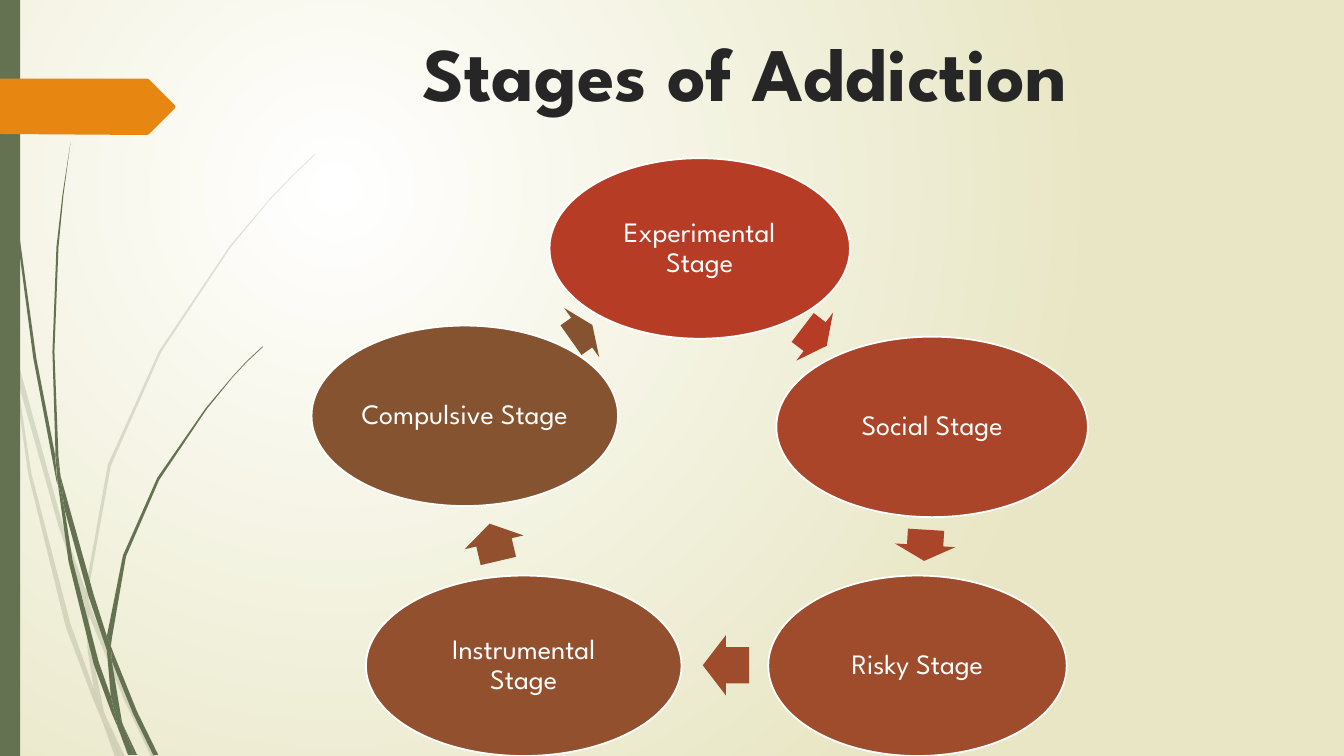
from lxml import etree
from pptx import Presentation
from pptx.dml.color import RGBColor
from pptx.enum.shapes import MSO_SHAPE
from pptx.enum.text import MSO_ANCHOR, PP_ALIGN
from pptx.oxml.ns import qn
from pptx.util import Inches, Pt

OVAL, ARROW, BAR = MSO_SHAPE.OVAL, MSO_SHAPE.RIGHT_ARROW, MSO_SHAPE.RECTANGLE
CENTER, MIDDLE, TOP = PP_ALIGN.CENTER, MSO_ANCHOR.MIDDLE, MSO_ANCHOR.TOP

COLUMNS, ROWS = 1333, 750
CELL = Inches(0.01)
FONT = "League Spartan"
COLORS = {
    "white": "FFFFFF", "cream": "E8E6C4", "green": "647252",
    "orange": "E78712", "ink": "262626",
    "experimental": "B73C26", "social": "AA4529", "risky": "9E4C2C",
    "instrumental": "92502F", "compulsive": "865331",
}
OVAL_ROWS, ARROW_ROWS = 179, 60

# stage, oval (left, top, columns), arrow (left, top, columns, angle)
STAGES = [
    ("experimental", (545, 157, 298), (793, 304, 30, 37.4)),
    ("social", (770, 334, 309), (902, 511, 31, 93.5)),
    ("risky", (762, 571, 296), (697, 630, 46, 180)),
    ("instrumental", (363, 571, 313), (471, 508, 38, 256.8)),
    ("compulsive", (309, 323, 304), (564, 300, 26, 324.6)),
]
TAG = [(0, 78), (146, 78), (148, 79), (173, 104), (174, 106),
       (173, 108), (148, 133), (146, 134), (0, 133)]
PALE_GRASS = [
    [(11, 350), (9, 322), (0, 282), (0, 299), (10, 344)],
    [(58, 522), (84, 599), (85, 586), (62, 520), (14, 345), (17, 376)],
    [(92, 607), (88, 596), (88, 610), (123, 694), (150, 751), (155, 751), (127, 692)],
    [(119, 751), (124, 751), (105, 711)],
    [(93, 683), (70, 619), (31, 469), (17, 376), (11, 350), (28, 470),
     (65, 621), (92, 693), (101, 714), (99, 707)],
    [(84, 599), (87, 646), (93, 683), (96, 692), (105, 711), (103, 706),
     (91, 646), (88, 610), (88, 608)],
    [(88, 584), (110, 462), (160, 349), (229, 245), (268, 198), (290, 175),
     (312, 154), (312, 153), (289, 175), (268, 197), (228, 244), (158, 348),
     (107, 461), (85, 584), (85, 586), (88, 596)],
    [(101, 714), (114, 751), (119, 751)],
    [(88, 608), (88, 610), (88, 596), (85, 586), (84, 599)],
    [(96, 692), (93, 683), (99, 707), (101, 714), (119, 751), (105, 711)],
]
DARK_GRASS = [
    [(7, 110), (17, 233), (33, 355), (56, 477), (57, 481), (55, 457), (55, 453),
     (36, 355), (19, 232), (8, 109), (5, 48), (4, 0), (3, 0), (4, 48)],
    [(88, 592), (106, 645), (106, 633), (106, 631), (93, 590), (60, 472), (64, 505)],
    [(113, 649), (110, 641), (111, 656), (132, 708), (152, 749), (157, 749), (136, 706)],
    [(110, 691), (98, 657), (72, 556), (64, 505), (57, 477), (68, 557),
     (93, 659), (111, 708), (117, 722), (116, 717)],
    [(60, 472), (58, 453), (54, 349), (58, 245), (63, 193), (70, 141),
     (62, 193), (56, 245), (52, 349), (55, 449)],
    [(133, 749), (136, 749), (122, 719)],
    [(57, 477), (64, 505), (60, 472), (55, 449), (55, 453)],
    [(111, 633), (125, 552), (158, 476), (205, 406), (231, 374), (245, 359),
     (261, 344), (260, 344), (245, 358), (231, 373), (204, 405), (156, 474),
     (122, 551), (106, 631), (110, 641)],
    [(117, 722), (127, 749), (131, 749)],
    [(106, 645), (110, 691), (116, 706), (122, 719), (121, 716), (111, 656), (109, 651)],
    [(106, 645), (109, 651), (111, 656), (110, 641), (106, 631), (106, 633)],
    [(116, 706), (110, 691), (116, 717), (117, 722), (130, 749), (133, 749), (122, 719)],
]


def rgb(name):
    return RGBColor.from_string(COLORS[name])


def cells(*counts):
    return [count * CELL for count in counts]


def paint(shape, color, outline=None, alpha=None):
    shape.shadow.inherit = False
    shape.fill.solid()
    shape.fill.fore_color.rgb = rgb(color)
    if alpha is not None:
        tint = shape.element.spPr.find(qn("a:solidFill"))[0]
        etree.SubElement(tint, qn("a:alpha"), val=str(alpha * 1000))
    if outline:
        shape.line.color.rgb = rgb(outline)
        shape.line.width = Pt(1.25)
    else:
        shape.line.fill.background()


def add_preset(page, kind, place, color, outline=None):
    shape = page.shapes.add_shape(kind, *cells(*place))
    paint(shape, color, outline)
    return shape


def add_outline(page, points, color, alpha=None):
    builder = page.shapes.build_freeform(*points[0], scale=CELL)
    builder.add_line_segments(points[1:], close=True)
    paint(builder.convert_to_shape(), color, alpha=alpha)


def write(box, text, size, color, bold=False, anchor=TOP, inset=None, spacing=None, after=None):
    frame = box.text_frame
    frame.word_wrap = True
    frame.vertical_anchor = anchor
    if inset is not None:
        frame.margin_left = frame.margin_right = Inches(inset)
        frame.margin_top = frame.margin_bottom = Inches(inset)
    para = frame.paragraphs[0]
    para.alignment = CENTER
    if spacing:
        para.line_spacing = spacing
    if after:
        para.space_after = Pt(after)
    span = para.add_run()
    span.text = text
    span.font.name = FONT
    span.font.size = Pt(size)
    span.font.bold = bold
    span.font.color.rgb = rgb(color)


def add_background(page):
    fill = page.background.fill
    fill.gradient()
    for stop, position, color in zip(fill.gradient_stops, (0, 1), ("white", "cream")):
        stop.position = position
        stop.color.rgb = rgb(color)
    gradient = next(page.element.iter(qn("a:gradFill")))
    gradient.remove(gradient.find(qn("a:lin")))
    glow = etree.SubElement(gradient, qn("a:path"), path="circle")
    etree.SubElement(glow, qn("a:fillToRect"), l="50000", t="50000", r="100000", b="100000")


def add_stage(page, name, oval_place, arrow_place):
    oval = add_preset(page, OVAL, (*oval_place, OVAL_ROWS), name, outline="white")
    write(oval, f"{name.title()} Stage", 20, "white",
          anchor=MIDDLE, inset=0.03, spacing=0.9, after=7)
    *place, angle = arrow_place
    arrow = add_preset(page, ARROW, (*place, ARROW_ROWS), name)
    arrow.adjustments[0] = 0.6
    arrow.adjustments[1] = 0.5
    arrow.rotation = angle


def main():
    deck = Presentation()
    deck.slide_width, deck.slide_height = cells(COLUMNS, ROWS)
    page = deck.slides.add_slide(deck.slide_layouts[6])
    add_background(page)
    for blade in PALE_GRASS:
        add_outline(page, blade, "green", alpha=20)
    for blade in DARK_GRASS:
        add_outline(page, blade, "green")
    add_preset(page, BAR, (0, 0, 20, ROWS), "green")
    add_outline(page, TAG, "orange")
    title = page.shapes.add_textbox(*cells(251, 21, 975, 140))
    write(title, "Stages of Addiction", 54, "ink", bold=True)
    for stage in STAGES:
        add_stage(page, *stage)
    deck.save("out.pptx")


if __name__ == "__main__":
    main()
